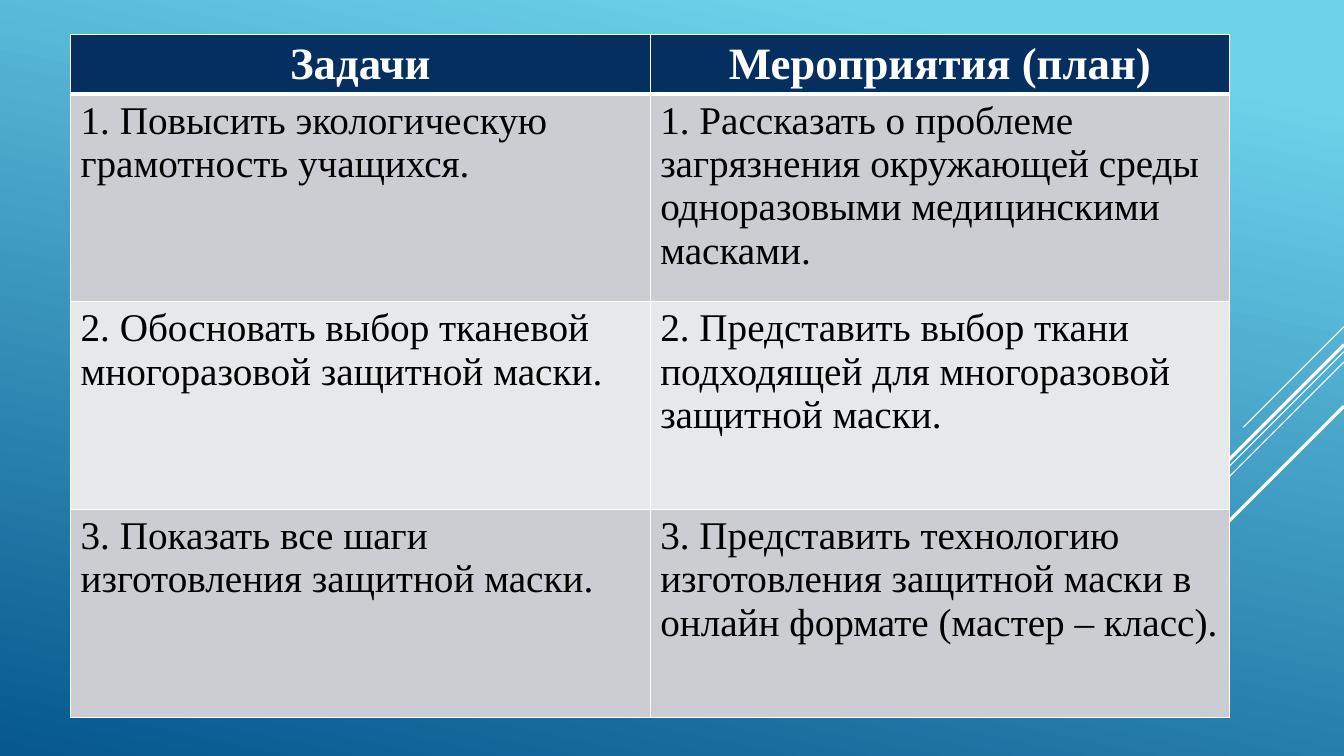
import dataclasses

import lxml.etree
import pptx
import pptx.dml.color
import pptx.enum.shapes
import pptx.enum.text
import pptx.oxml.ns
import pptx.util

COLORS = {
    "sky": "6ED2EB",
    "deep": "06588E",
    "navy": "052F61",
    "band": "CCCDD2",
    "pale": "E7E8EA",
    "white": "FFFFFF",
    "black": "000000",
}
SLIDE_W = pptx.util.Inches(13.333)
SLIDE_H = pptx.util.Inches(7.5)

TABLE_LEFT, TABLE_TOP = 5.25, 4.53
COL_W, HEADER_H, BODY_H = 43.13, 7.87, 27.47
THIN, THICK = 1, 3


@dataclasses.dataclass
class Ray:
    top: float
    drop: float
    weight: float


@dataclasses.dataclass
class Row:
    texts: tuple[str, str]
    fill: str
    is_header: bool = False


RAYS = [
    Ray(43.2, 13.33, 0.75),
    Ray(46.53, 43.47, 0.75),
    Ray(47.87, 27.6, 0.75),
    Ray(45.6, 25.47, 2.25),
    Ray(53.73, 18.53, 2.25),
]

ROWS = [
    Row(("Задачи", "Мероприятия (план)"), "navy", True),
    Row(("1. Повысить экологическую грамотность учащихся.",
         "1. Рассказать о проблеме загрязнения окружающей среды "
         "одноразовыми медицинскими масками."), "band"),
    Row(("2. Обосновать выбор тканевой многоразовой защитной маски.",
         "2. Представить выбор ткани подходящей для многоразовой "
         "защитной маски."), "pale"),
    Row(("3. Показать все шаги изготовления защитной маски.",
         "3. Представить технологию изготовления защитной маски в "
         "онлайн формате (мастер – класс)."), "band"),
]

HEADER_FONT = {"name": "Times New Roman", "size": pptx.util.Pt(32), "bold": True}
BODY_FONT = {"name": "Times New Roman", "size": pptx.util.Pt(28), "bold": False}


def rgb(name: str) -> pptx.dml.color.RGBColor:
    return pptx.dml.color.RGBColor.from_string(COLORS[name])


def share_w(percent: float) -> int:
    return round(SLIDE_W * percent / 100)


def share_h(percent: float) -> int:
    return round(SLIDE_H * percent / 100)


def paint_background(slide) -> None:
    fill = slide.background.fill
    fill.gradient()
    fill.gradient_angle = 258
    for stop, position, color in zip(fill.gradient_stops, (0.1, 1), ("sky", "deep")):
        stop.position = position
        stop.color.rgb = rgb(color)


def draw_ray(slide, ray: Ray) -> None:
    top, drop = share_h(ray.top), share_h(ray.drop)
    sp = slide.shapes.add_connector(
        pptx.enum.shapes.MSO_CONNECTOR.STRAIGHT,
        SLIDE_W, top, SLIDE_W - drop, top + drop)
    sp.line.color.rgb = rgb("white")
    sp.line.width = pptx.util.Pt(ray.weight)
    lxml.etree.SubElement(sp._element.spPr, pptx.oxml.ns.qn("a:effectLst"))


def set_borders(cell, widths: dict[str, float]) -> None:
    tc_pr = cell._tc.get_or_add_tcPr()
    for i, (side, width) in enumerate(widths.items()):
        ln = lxml.etree.Element(pptx.oxml.ns.qn(f"a:ln{side}"),
                                w=str(pptx.util.Pt(width)))
        solid = lxml.etree.SubElement(ln, pptx.oxml.ns.qn("a:solidFill"))
        lxml.etree.SubElement(solid, pptx.oxml.ns.qn("a:srgbClr"), val=COLORS["white"])
        tc_pr.insert(i, ln)


def fill_cell(cell, text: str, row: Row, borders: dict[str, float]) -> None:
    cell.fill.solid()
    cell.fill.fore_color.rgb = rgb(row.fill)
    set_borders(cell, borders)
    p = cell.text_frame.paragraphs[0]
    align = pptx.enum.text.PP_ALIGN
    p.alignment = align.CENTER if row.is_header else align.LEFT
    r = p.add_run()
    r.text = text
    for key, value in (HEADER_FONT if row.is_header else BODY_FONT).items():
        setattr(r.font, key, value)
    r.font.color.rgb = rgb("white" if row.is_header else "black")


def draw_table(slide, rows: list[Row]) -> None:
    n_cols = len(rows[0].texts)
    heights = [HEADER_H if row.is_header else BODY_H for row in rows]
    table = slide.shapes.add_table(
        len(rows), n_cols, share_w(TABLE_LEFT), share_h(TABLE_TOP),
        share_w(COL_W * n_cols), share_h(sum(heights))).table
    for col in table.columns:
        col.width = share_w(COL_W)
    for i, (row, height) in enumerate(zip(rows, heights)):
        table.rows[i].height = share_h(height)
        borders = {
            "L": THIN,
            "R": THIN,
            "T": THICK if i and rows[i - 1].is_header else THIN,
            "B": THICK if row.is_header else THIN,
        }
        for j, text in enumerate(row.texts):
            fill_cell(table.cell(i, j), text, row, borders)


def main() -> None:
    prs = pptx.Presentation()
    prs.slide_width, prs.slide_height = SLIDE_W, SLIDE_H
    slide = prs.slides.add_slide(prs.slide_layouts[6])
    paint_background(slide)
    for ray in RAYS:
        draw_ray(slide, ray)
    draw_table(slide, ROWS)
    prs.save("out.pptx")


if __name__ == "__main__":
    main()
